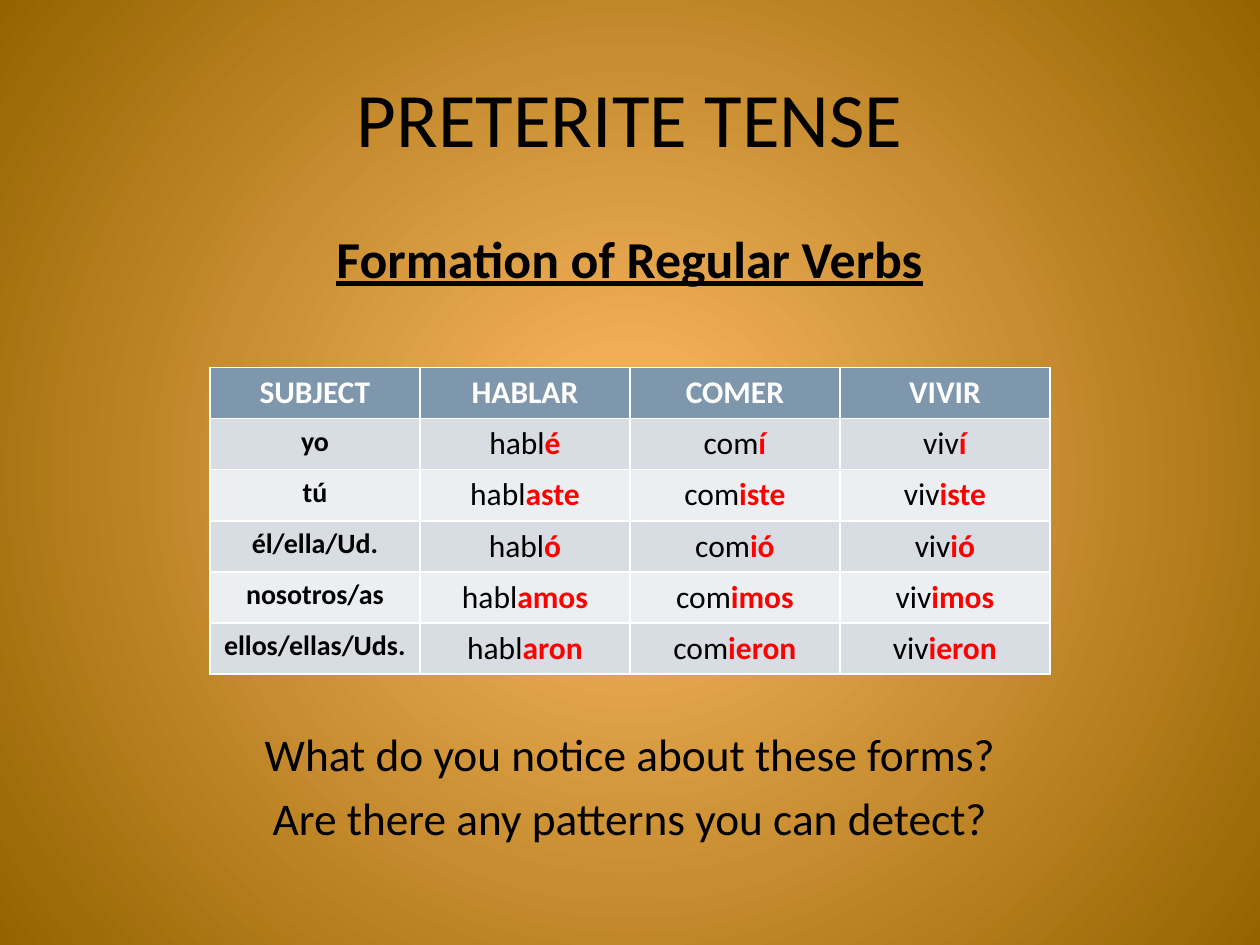
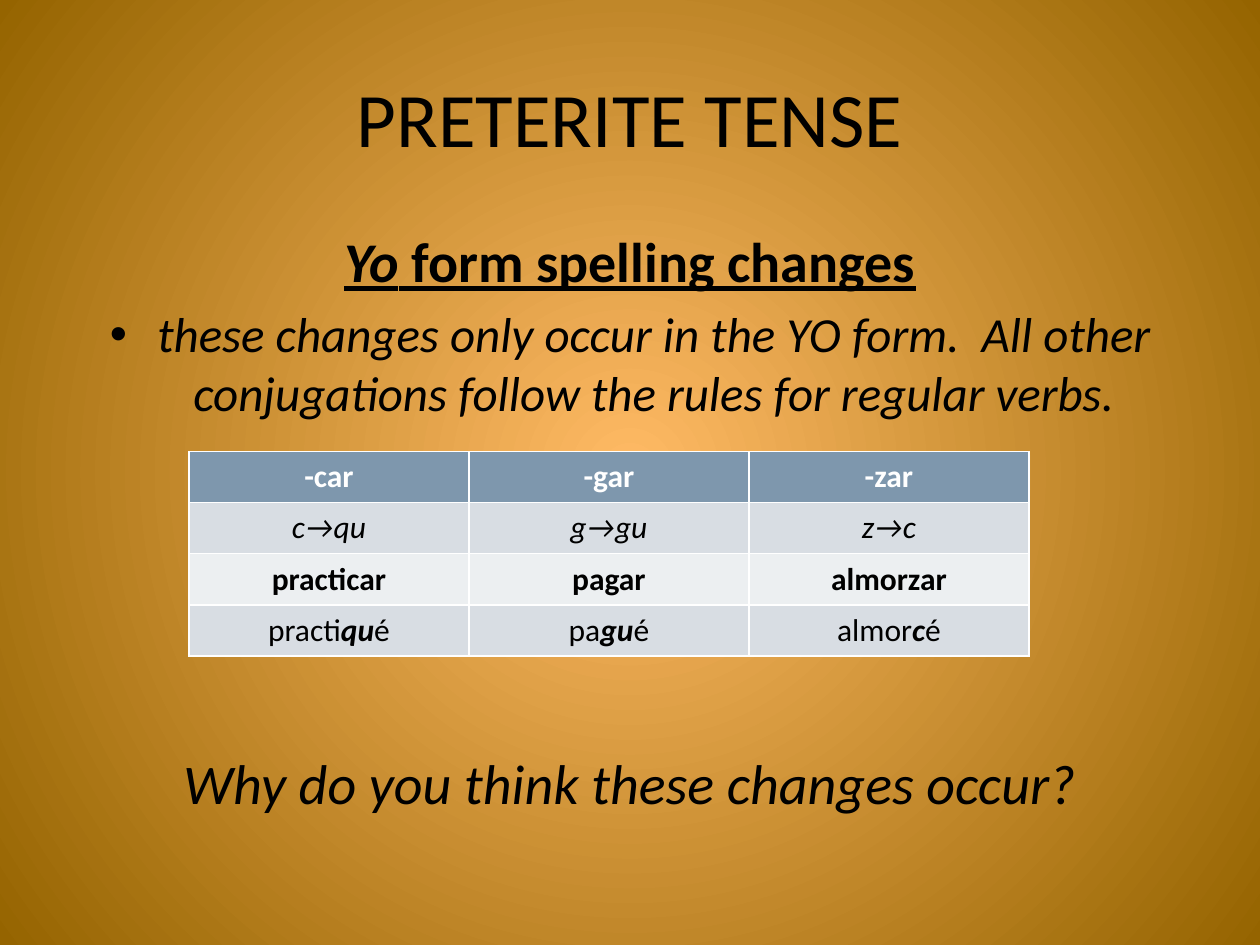
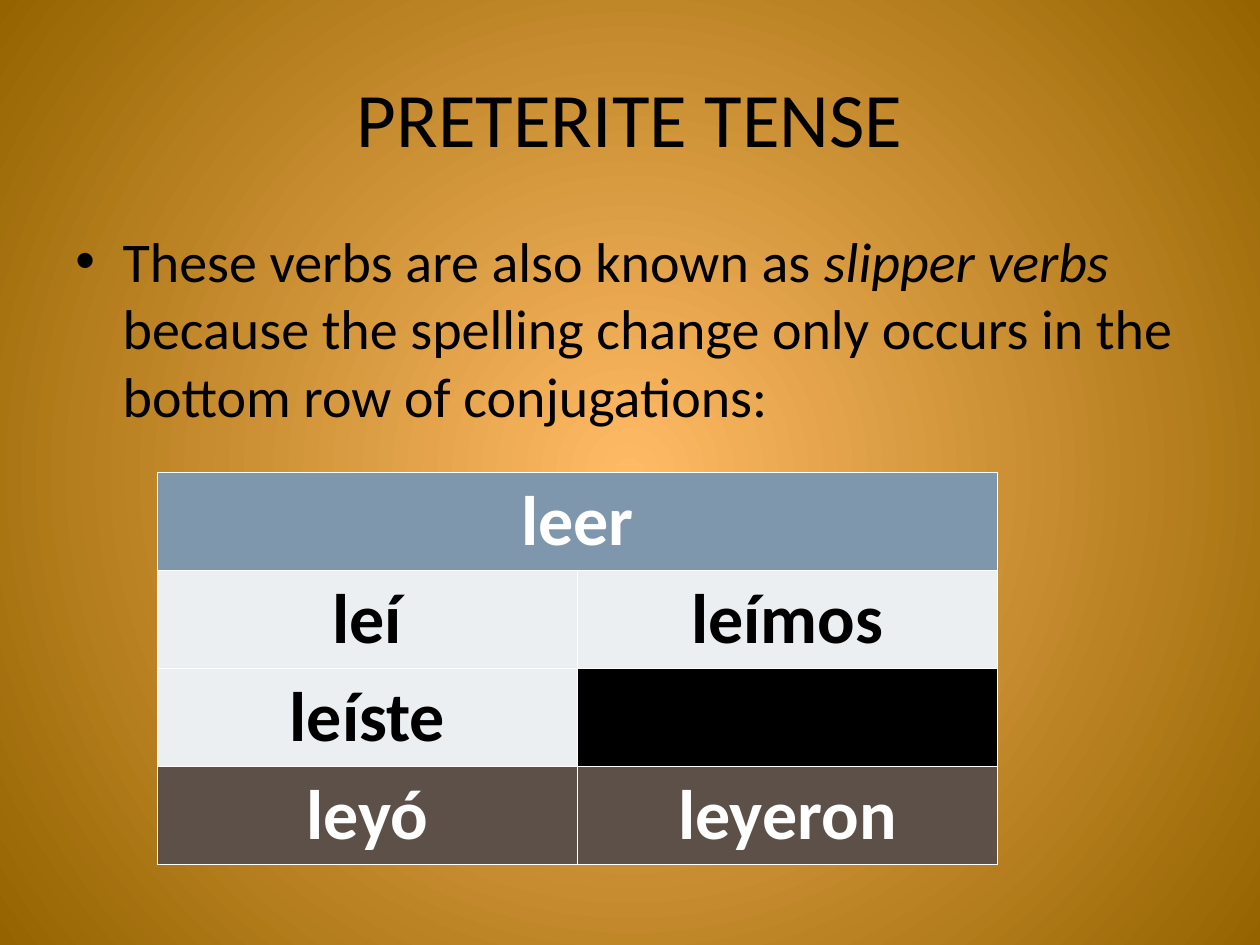
import pptx
import pptx.dml.color
import pptx.enum.text
import pptx.oxml
import pptx.oxml.ns
import pptx.util
from lxml import etree

Pt = pptx.util.Pt
ALIGN = pptx.enum.text.PP_ALIGN
ANCHOR = pptx.enum.text.MSO_ANCHOR

FONT = "Calibri"
BLACK, WHITE, RED = "000000", "FFFFFF", "FF0000"
HEAD, DARK, PALE, BROWN = "7E97AD", "D8DDE3", "ECEFF1", "5C5048"
GLOW, EDGE = "FFBA65", "956400"
LEFT, WIDE, TABLE = 36, 648, 480


def tint(code):
    return pptx.dml.color.RGBColor.from_string(code)


class Deck:
    """Holds the shared style and the current slide, and adds each kind of element."""

    def __init__(self):
        self.show = pptx.Presentation()
        self.show.slide_width, self.show.slide_height = Pt(720), Pt(540)
        self.glow()

    def glow(self):
        master = self.show.slide_master
        fill = master.background.fill
        fill.gradient()
        for stop, code, place in zip(fill.gradient_stops, (GLOW, EDGE), (0, 1)):
            stop.color.rgb = tint(code)
            stop.position = place
        qn = pptx.oxml.ns.qn
        grad = master.element.find(".//" + qn("p:bg")).find(".//" + qn("a:gradFill"))
        grad.remove(grad.find(qn("a:lin")))
        ring = etree.SubElement(grad, qn("a:path"))
        ring.set("path", "circle")
        etree.SubElement(ring, qn("a:fillToRect"), l="50000", t="50000", r="50000", b="50000")

    def page(self, title):
        self.slide = self.show.slides.add_slide(self.show.slide_layouts[5])
        shape = self.slide.shapes.title
        shape.left, shape.top, shape.width, shape.height = Pt(LEFT), Pt(21.6), Pt(WIDE), Pt(90)
        frame = shape.text_frame
        frame.vertical_anchor = ANCHOR.MIDDLE
        self.style(frame.paragraphs[0], [(title, "")], 44)

    def style(self, para, runs, size, code=BLACK, align=ALIGN.CENTER):
        para.alignment = align
        for text, marks in runs:
            run = para.add_run()
            run.text = text
            font = run.font
            font.name, font.size = FONT, Pt(size)
            font.bold, font.italic, font.underline = ("b" in marks, "i" in marks, "u" in marks)
            font.color.rgb = tint(RED if "r" in marks else code)

    def bullet(self, para):
        props = para._p.get_or_add_pPr()
        props.set("marL", str(Pt(27)))
        props.set("indent", str(-Pt(27)))
        qn = pptx.oxml.ns.qn
        etree.SubElement(props, qn("a:buFont"), typeface="Arial")
        etree.SubElement(props, qn("a:buChar"), char="•")

    def body(self, height, *lines):
        box = self.slide.shapes.add_textbox(Pt(LEFT), Pt(126), Pt(WIDE), Pt(height))
        frame = box.text_frame
        frame.word_wrap = True
        for spot, (runs, size, gap, dot, align) in enumerate(lines):
            para = frame.add_paragraph() if spot else frame.paragraphs[0]
            self.style(para, runs, size, align=align)
            para.space_before = Pt(gap)
            if dot:
                self.bullet(para)

    def table(self, left, top, tall, rows, fills):
        count = len(rows[0])
        frame = self.slide.shapes.add_table(
            len(rows), count, Pt(left), Pt(top), Pt(TABLE), Pt(tall * len(rows)))
        grid = frame.table
        for col in grid.columns:
            col.width = Pt(TABLE / count)
        for y, row in enumerate(rows):
            grid.rows[y].height = Pt(tall)
            for x, (runs, size) in enumerate(row):
                cell = grid.cell(y, x)
                cell.fill.solid()
                cell.fill.fore_color.rgb = tint(fills[y])
                code = WHITE if fills[y] in (HEAD, BROWN) else BLACK
                self.style(cell.text_frame.paragraphs[0], runs, size, code)
        return grid


def line(runs, size, gap=0, dot=False, align=ALIGN.CENTER):
    return runs, size, gap, dot, align


def cells(words, marks="", size=18):
    return [([(word, marks)], size) for word in words]


def regular(deck):
    deck.page("PRETERITE TENSE")
    deck.body(
        348,
        line([("Formation of Regular Verbs", "bu")], 29.6),
        line([("What do you notice about these forms?", "")], 25.9, 250),
        line([("Are there any patterns you can detect?", "")], 25.9, 5.2))
    stems = ("habl", "com", "viv")
    forms = {
        "yo": ("é", "í", "í"),
        "tú": ("aste", "iste", "iste"),
        "él/ella/Ud.": ("ó", "ió", "ió"),
        "nosotros/as": ("amos", "imos", "imos"),
        "ellos/ellas/Uds.": ("aron", "ieron", "ieron"),
    }
    rows = [cells(("SUBJECT", "HABLAR", "COMER", "VIVIR"), "b")]
    for who, ends in forms.items():
        verbs = [([(stem, ""), (end, "br")], 18) for stem, end in zip(stems, ends)]
        rows.append(cells([who], "b", 16) + verbs)
    deck.table(120, 210, 29.2, rows, [HEAD, DARK, PALE, DARK, PALE, DARK])


def spelling(deck):
    deck.page("PRETERITE TENSE")
    rule = ("these changes only occur in the YO form.  "
            "All other conjugations follow the rules for regular verbs.")
    deck.body(
        356.4,
        line([("Yo", "biu"), (" form spelling changes", "bu")], 32),
        line([(rule, "i")], 28, 5.6, True),
        line([("Why do you think these changes occur?", "i")], 32, 187))
    parts = (("practi", "qu"), ("pa", "gu"), ("almor", "c"))
    rows = [
        cells(("-car", "-gar", "-zar"), "b"),
        cells(("c→qu", "g→gu", "z→c"), "i"),
        cells(("practicar", "pagar", "almorzar"), "b"),
        [([(stem, ""), (change, "bi"), ("é", "")], 18) for stem, change in parts],
    ]
    deck.table(108, 258, 29.2, rows, [HEAD, DARK, PALE, DARK])


def slipper(deck):
    deck.page("PRETERITE TENSE")
    runs = [("These verbs are also known as ", ""), ("slipper verbs ", "i"),
            ("because the spelling change only occurs in the bottom row of conjugations:", "")]
    deck.body(356.4, line(runs, 32, dot=True, align=ALIGN.LEFT))
    blank = ([], 40)
    rows = [
        cells(["leer"], "b", 40) + [blank],
        cells(("leí", "leímos"), "b", 40),
        cells(["leíste"], "b", 40) + [blank],
        cells(("leyó", "leyeron"), "b", 40),
    ]
    grid = deck.table(90, 270, 56, rows, [HEAD, PALE, PALE, BROWN])
    grid.last_row = True
    grid.cell(0, 0).merge(grid.cell(0, 1))
    grid.cell(2, 1).fill.fore_color.rgb = tint(BLACK)


def main():
    deck = Deck()
    regular(deck)
    spelling(deck)
    slipper(deck)
    deck.show.save("out.pptx")


if __name__ == "__main__":
    main()
